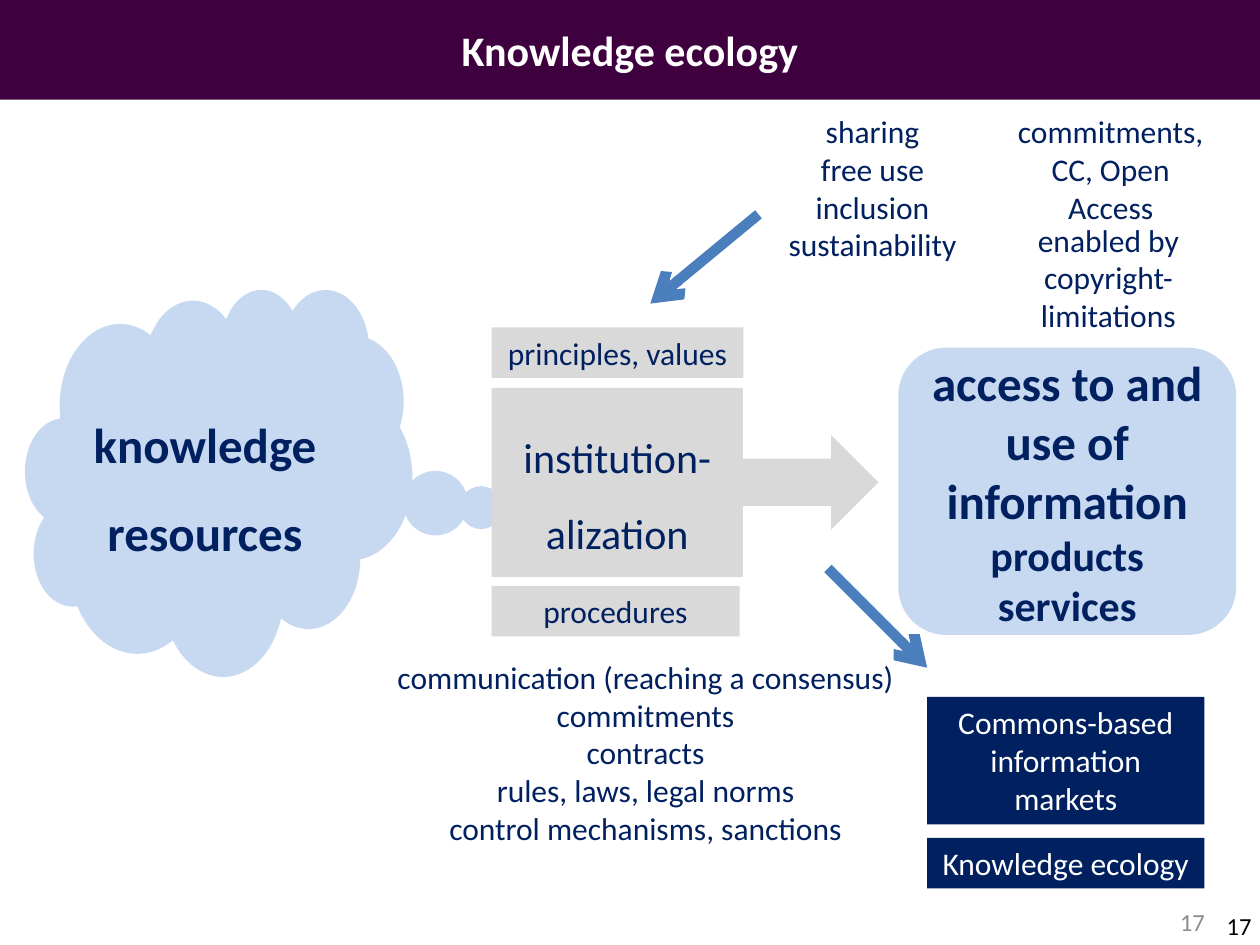
from dataclasses import dataclass

from lxml import etree
from pptx import Presentation
from pptx import util as u
from pptx.dml.color import RGBColor
from pptx.enum import shapes, text
from pptx.oxml.ns import qn

NAVY, WHITE, BLACK = "002060", "FFFFFF", "000000"
PURPLE, SKY, SILVER, GREY, BLUE = "3E003E", "C6D9F1", "D9D9D9", "8C8C8C", "4B7EBC"
Kind = shapes.MSO_SHAPE
Anchor = text.MSO_ANCHOR
Align = text.PP_ALIGN


@dataclass
class Label:
    """A text block; position and size are in centimetres, text size in points."""
    left: float
    top: float
    width: float
    height: float
    lines: tuple[str, ...]
    size: float = 18
    color: str = NAVY
    bold: bool = False
    align: Align = Align.CENTER
    anchor: Anchor = Anchor.TOP
    spacing: float = 1
    inset: tuple[float, float] = (0.25, 0.13)
    kind: Kind | None = None
    fill: str = WHITE
    adjustments: tuple[float, ...] = ()


@dataclass
class Arrow:
    start: tuple[float, float]
    end: tuple[float, float]


def rgb(color: str) -> RGBColor:
    return RGBColor.from_string(color)


def add_label(slide, label: Label):
    box = [u.Cm(value) for value in (label.left, label.top, label.width, label.height)]
    if label.kind is None:
        shape = slide.shapes.add_textbox(*box)
    else:
        shape = slide.shapes.add_shape(label.kind, *box)
        shape.shadow.inherit = False
        shape.fill.solid()
        shape.fill.fore_color.rgb = rgb(label.fill)
        shape.line.fill.background()
        for index, value in enumerate(label.adjustments):
            shape.adjustments[index] = value

    frame = shape.text_frame
    frame.word_wrap = True
    frame.vertical_anchor = label.anchor
    frame.margin_left = frame.margin_right = u.Cm(label.inset[0])
    frame.margin_top = frame.margin_bottom = u.Cm(label.inset[1])
    frame.text = "\n".join(label.lines)
    for paragraph in frame.paragraphs:
        paragraph.alignment = label.align
        paragraph.line_spacing = label.spacing
        paragraph.font.name = "Calibri"
        paragraph.font.size = u.Pt(label.size)
        paragraph.font.bold = label.bold
        paragraph.font.color.rgb = rgb(label.color)
    return shape


def add_arrow(slide, arrow: Arrow) -> None:
    ends = [u.Cm(value) for value in (*arrow.start, *arrow.end)]
    connector = slide.shapes.add_connector(shapes.MSO_CONNECTOR.STRAIGHT, *ends)
    connector.line.color.rgb = rgb(BLUE)
    connector.line.width = u.Pt(6)
    line = connector.line._get_or_add_ln()
    etree.SubElement(line, qn("a:tailEnd"), type="arrow")
    etree.SubElement(connector._element.spPr, qn("a:effectLst"))


TITLE = Label(0, 0, 25.4, 2.01, ("Knowledge ecology",), 24, WHITE, True,
              anchor=Anchor.MIDDLE, inset=(0, 0), kind=Kind.RECTANGLE, fill=PURPLE)
RESOURCES = Label(0.51, 5.82, 7.8, 7.8, ("knowledge resources",), 28, bold=True,
                  anchor=Anchor.MIDDLE, spacing=1.5, kind=Kind.CLOUD_CALLOUT,
                  fill=SKY, adjustments=(0.741, 0.072))
INSTITUTION = Label(9.91, 7.82, 7.8, 3.81, ("institution-alization",), 24,
                    anchor=Anchor.MIDDLE, spacing=1.5,
                    kind=Kind.RIGHT_ARROW_CALLOUT, fill=SILVER)
ACCESS = Label(18.11, 7.01, 6.81, 5.79, ("access to and use of information", "services"),
               24, bold=True, anchor=Anchor.MIDDLE, kind=Kind.ROUNDED_RECTANGLE, fill=SKY)
DETAILS = [
    Label(9.91, 6.6, 5.08, 1.02, ("principles, values",), kind=Kind.RECTANGLE, fill=SILVER),
    Label(9.91, 11.81, 5, 1.02, ("procedures",), kind=Kind.RECTANGLE, fill=SILVER),
    Label(15.09, 2.13, 5, 3.33, ("sharing", "free use", "inclusion", "sustainability")),
    Label(7.11, 13.13, 11.81, 4.11,
          ("communication (reaching a consensus)", "commitments", "contracts",
           "rules, laws, legal norms", "control mechanisms, sanctions")),
    Label(18.69, 14.05, 5.59, 2.57, ("Commons-based information markets",),
          color=WHITE, kind=Kind.RECTANGLE, fill=NAVY),
    Label(18.69, 16.89, 5.59, 1.02, ("Knowledge ecology",),
          color=WHITE, kind=Kind.RECTANGLE, fill=NAVY),
    Label(20.3, 4.32, 4.09, 2.57, ("enabled by copyright-limitations",)),
    Label(20.09, 2.13, 4.6, 2.57, ("commitments, CC, Open Access",)),
]
PAGE_NUMBERS = [
    Label(18.62, 18.08, 5.92, 1.02, ("17",), 14, GREY, align=Align.RIGHT,
          anchor=Anchor.MIDDLE),
    Label(23.5, 17.73, 1.73, 1.32, ("17",), 14, BLACK, align=Align.RIGHT,
          anchor=Anchor.BOTTOM, inset=(0, 0.1)),
]
ARROWS = [
    Arrow((15.29, 4.32), (13.11, 6.12)),
    Arrow((16.69, 11.46), (18.69, 13.46)),
]


def main() -> None:
    presentation = Presentation()
    presentation.slide_width, presentation.slide_height = u.Cm(25.4), u.Cm(19.05)
    slide = presentation.slides.add_slide(presentation.slide_layouts[6])

    for label in (TITLE, RESOURCES, INSTITUTION):
        add_label(slide, label)

    heading = add_label(slide, ACCESS).text_frame.paragraphs[0]
    heading.runs[0].font.size = u.Pt(28)
    heading.add_run().text = " products"

    for label in DETAILS + PAGE_NUMBERS:
        add_label(slide, label)
    for arrow in ARROWS:
        add_arrow(slide, arrow)

    presentation.save("out.pptx")


if __name__ == "__main__":
    main()
